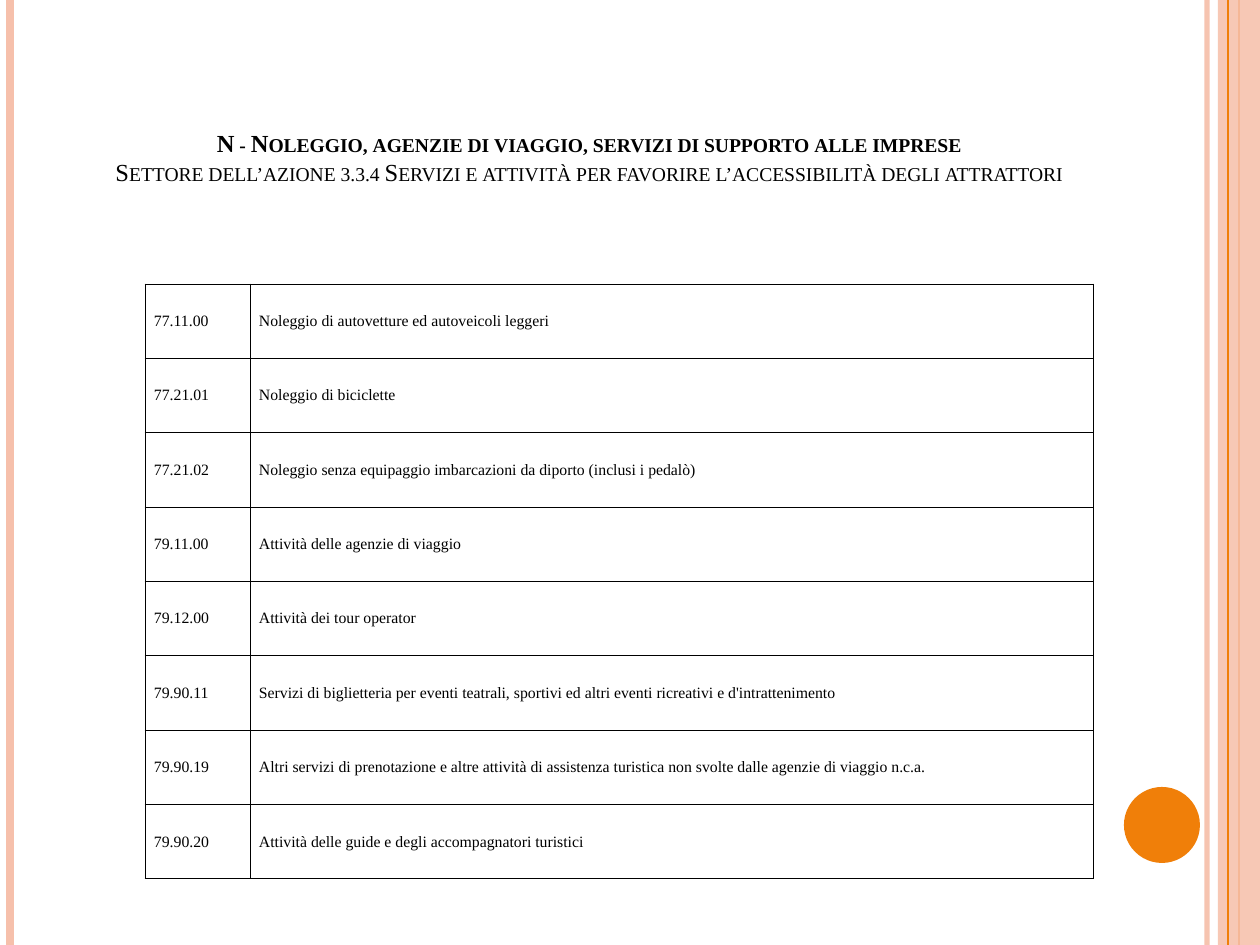
from lxml import etree
from pptx import Presentation
from pptx.dml.color import RGBColor
from pptx.enum.shapes import MSO_CONNECTOR, MSO_SHAPE
from pptx.enum.text import MSO_ANCHOR, PP_ALIGN
from pptx.oxml.ns import qn
from pptx.util import Emu, Pt

STRAIGHT = MSO_CONNECTOR.STRAIGHT
RECTANGLE, OVAL = MSO_SHAPE.RECTANGLE, MSO_SHAPE.OVAL
MIDDLE, BOTTOM = MSO_ANCHOR.MIDDLE, MSO_ANCHOR.BOTTOM
CENTER = PP_ALIGN.CENTER

THEME = {
    "peach": RGBColor(0xF6, 0xC0, 0xAB),
    "orange": RGBColor(0xF0, 0x7F, 0x09),
    "text": RGBColor(0, 0, 0),
    "font": "Times New Roman",
    "title": Pt(14),
    "cell": Pt(9),
    "border": Pt(0.5),
}
WIDTH, HEIGHT = 1260, 945
SCALE = 914400 / 126


def px(*lengths):
    return [Emu(round(length * SCALE)) for length in lengths]


def set_alpha(fill_parent, percent):
    color = fill_parent.find(qn("a:solidFill"))[0]
    etree.SubElement(color, qn("a:alpha")).set("val", str(percent * 1000))


deck = Presentation()
deck.slide_width, deck.slide_height = px(WIDTH, HEIGHT)
page = deck.slides.add_slide(deck.slide_layouts[6])

STRIPES = [
    (1207, "peach", 3, 93),
    (10, "peach", 4.5, 100),
    (1239, "orange", 1.5, 100),
    (1228, "orange", 0.75, 100),
]
PANELS = [
    (RECTANGLE, (1218, 0, 42, HEIGHT), "peach", 87),
    (OVAL, (1124, 787, 76, 76), "orange", 100),
]


stripes = []
for x, color, weight, opacity in STRIPES:
    stripe = page.shapes.add_connector(STRAIGHT, *px(x, 0, x, HEIGHT))
    stripe.line.color.rgb = THEME[color]
    stripe.line.width = Pt(weight)
    if opacity < 100:
        set_alpha(stripe.line._get_or_add_ln(), opacity)
    etree.SubElement(stripe._element.spPr, qn("a:effectLst"))
    stripes.append(stripe)

for kind, bounds, color, opacity in PANELS:
    panel = page.shapes.add_shape(kind, *px(*bounds))
    panel.shadow.inherit = False
    panel.fill.solid()
    panel.fill.fore_color.rgb = THEME[color]
    panel.line.fill.background()
    if opacity < 100:
        set_alpha(panel._element.spPr, opacity)
        panel._element.addnext(stripes[-1]._element)

box = page.shapes.add_textbox(*px(74, 35, 1030, 158))
frame = box.text_frame
frame.word_wrap = True
frame.vertical_anchor = BOTTOM
para = frame.paragraphs[0]
para.alignment = CENTER
para.space_before = Pt(6)
para.font.name = THEME["font"]
para.font.size = THEME["title"]
para.font.color.rgb = THEME["text"]
TITLE = [
    ("N - Noleggio, agenzie di viaggio, servizi di supporto alle imprese", True),
    ("Settore dell’azione 3.3.4 Servizi e attività per favorire l’accessibilità degli attrattori", False),
]
for index, (words, bold) in enumerate(TITLE):
    if index:
        para.add_line_break()
    span = para.add_run()
    span.text = words
    span.font.bold = bold
    span.font._element.set("cap", "small")

ROWS = [
    ("77.11.00", "Noleggio di autovetture ed autoveicoli leggeri"),
    ("77.21.01", "Noleggio di biciclette"),
    ("77.21.02", "Noleggio senza equipaggio imbarcazioni da diporto (inclusi i pedalò)"),
    ("79.11.00", "Attività delle agenzie di viaggio"),
    ("79.12.00", "Attività dei tour operator"),
    ("79.90.11", "Servizi di biglietteria per eventi teatrali, sportivi ed altri eventi ricreativi e d'intrattenimento"),
    ("79.90.19", "Altri servizi di prenotazione e altre attività di assistenza turistica non svolte dalle agenzie di viaggio n.c.a."),
    ("79.90.20", "Attività delle guide e degli accompagnatori turistici"),
]
COLUMNS = (105, 843)
table = page.shapes.add_table(len(ROWS), len(COLUMNS), *px(145, 284, sum(COLUMNS), 595)).table
table.first_row = table.horz_banding = False
for column, width in zip(table.columns, px(*COLUMNS)):
    column.width = width

for row, texts in enumerate(ROWS):
    for column, words in enumerate(texts):
        cell = table.cell(row, column)
        cell.text = words
        cell.vertical_anchor = MIDDLE
        cell.margin_left, cell.margin_right, cell.margin_top, cell.margin_bottom = px(9, 9, 6, 6)
        font = cell.text_frame.paragraphs[0].font
        font.name = THEME["font"]
        font.size = THEME["cell"]
        font.color.rgb = THEME["text"]
        cell.fill.background()
        properties = cell._tc.get_or_add_tcPr()
        for place, side in enumerate(("lnL", "lnR", "lnT", "lnB")):
            border = etree.Element(qn(f"a:{side}"), w=str(THEME["border"]))
            fill = etree.SubElement(border, qn("a:solidFill"))
            etree.SubElement(fill, qn("a:srgbClr"), val=str(THEME["text"]))
            properties.insert(place, border)

deck.save("out.pptx")
